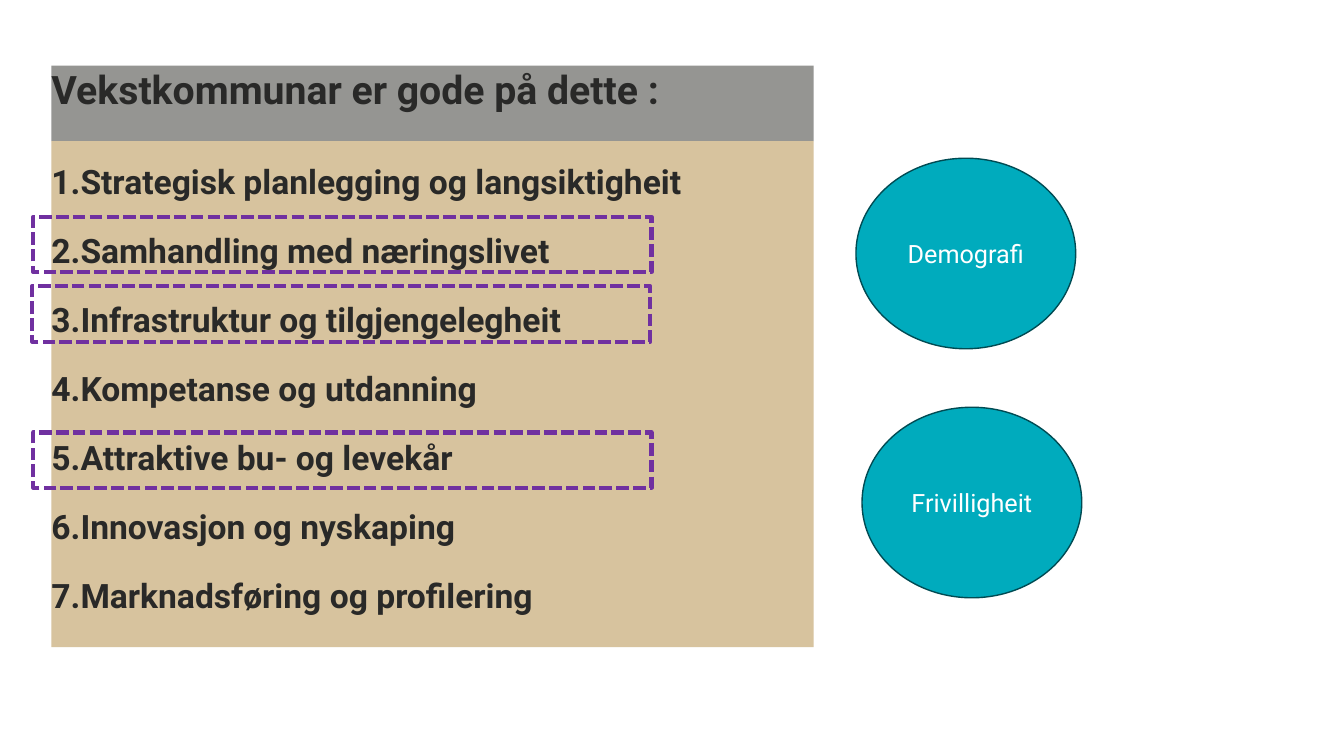
from dataclasses import dataclass

from lxml import etree
from pptx import Presentation
from pptx.dml.color import RGBColor
from pptx.enum.dml import MSO_LINE
from pptx.enum.shapes import MSO_SHAPE
from pptx.enum.text import MSO_ANCHOR, MSO_AUTO_SIZE, PP_ALIGN
from pptx.oxml.ns import qn
from pptx.shapes.autoshape import Shape
from pptx.slide import Slide
from pptx.util import Emu, Inches, Pt

RECTANGLE, OVAL = MSO_SHAPE.RECTANGLE, MSO_SHAPE.OVAL
TOP, MIDDLE = MSO_ANCHOR.TOP, MSO_ANCHOR.MIDDLE
LEFT, CENTER = PP_ALIGN.LEFT, PP_ALIGN.CENTER
DASHED = MSO_LINE.SQUARE_DOT
NO_AUTOFIT = MSO_AUTO_SIZE.NONE
TITLE_ONLY = 5
SLIDE_WIDTH, SLIDE_HEIGHT = Inches(13.33), Inches(7.5)


@dataclass(frozen=True)
class Theme:
    font: str = "Roboto"
    ink: str = "292928"
    white: str = "FFFFFF"
    sand: str = "D7C39E"
    gray: str = "959592"
    purple: str = "7030A0"
    teal: str = "00ABBD"
    dark_teal: str = "004B53"
    title_size: int = 28
    list_size: int = 24
    label_size: int = 18


@dataclass(frozen=True)
class Area:
    """Percent shares of the slide's width and height."""

    left: float
    top: float
    width: float
    height: float

    def bounds(self) -> tuple[Emu, Emu, Emu, Emu]:
        return (
            Emu(round(SLIDE_WIDTH * self.left / 100)),
            Emu(round(SLIDE_HEIGHT * self.top / 100)),
            Emu(round(SLIDE_WIDTH * self.width / 100)),
            Emu(round(SLIDE_HEIGHT * self.height / 100)),
        )


@dataclass(frozen=True)
class Factor:
    label: str
    area: Area


THEME = Theme()
PANEL_LEFT, PANEL_WIDTH = 3.83, 56.71
HEADING_AREA = Area(PANEL_LEFT, 8.67, PANEL_WIDTH, 10)
LIST_AREA = Area(PANEL_LEFT, 18.67, PANEL_WIDTH, 66.93)
STRENGTHS = [
    "Strategisk planlegging og langsiktigheit",
    "Samhandling med næringslivet",
    "Infrastruktur og tilgjengelegheit",
    "Kompetanse og utdanning",
    "Attraktive bu- og levekår",
    "Innovasjon og nyskaping",
    "Marknadsføring og profilering",
]
HIGHLIGHTS = [
    Area(left, top, 45.99, 7.33)
    for left, top in ((2.48, 28.67), (2.4, 37.87), (2.48, 57.2))
]
FACTORS = [
    Factor("Demografi", Area(63.69, 20.93, 16.35, 25.2)),
    Factor("Frivilligheit", Area(64.14, 53.87, 16.35, 25.2)),
]


def place(shape: Shape, area: Area) -> None:
    shape.left, shape.top, shape.width, shape.height = area.bounds()


def paint(shape: Shape, color: str) -> None:
    shape.fill.solid()
    shape.fill.fore_color.rgb = RGBColor.from_string(color)


def write_text(
    shape: Shape,
    lines: list[str],
    *,
    size: int,
    color: str,
    bold: bool = False,
    align: PP_ALIGN = LEFT,
    anchor: MSO_ANCHOR = TOP,
    inset: float = 0,
    numbered: bool = False,
    line_spacing: float = 1.0,
    space_before: float = 0,
) -> None:
    frame = shape.text_frame
    frame.word_wrap = True
    frame.auto_size = NO_AUTOFIT
    frame.vertical_anchor = anchor
    frame.margin_left = frame.margin_right = Inches(inset)
    frame.margin_top = frame.margin_bottom = Inches(inset / 2)
    for index, line in enumerate(lines):
        paragraph = frame.add_paragraph() if index else frame.paragraphs[0]
        paragraph.text = line
        paragraph.alignment = align
        paragraph.line_spacing = line_spacing
        paragraph.space_before = Pt(space_before if index else 0)
        if numbered:
            number_paragraph(paragraph._p.get_or_add_pPr())
        font = paragraph.font
        font.name = THEME.font
        font.size = Pt(size)
        font.bold = bold
        font.color.rgb = RGBColor.from_string(color)


def number_paragraph(properties: etree.ElementBase) -> None:
    indent = Inches(0.2)
    properties.set("marL", str(indent))
    properties.set("indent", str(-indent))
    bullet_font = etree.SubElement(properties, qn("a:buFont"))
    bullet_font.set("typeface", "+mj-lt")
    numbering = etree.SubElement(properties, qn("a:buAutoNum"))
    numbering.set("type", "arabicPeriod")


def add_outlined_shape(
    slide: Slide, kind: MSO_SHAPE, area: Area, *, line: str, weight: float
) -> Shape:
    shape = slide.shapes.add_shape(kind, *area.bounds())
    shape.shadow.inherit = False
    shape.line.color.rgb = RGBColor.from_string(line)
    shape.line.width = Pt(weight)
    return shape


def add_heading(slide: Slide) -> None:
    heading = slide.shapes.title
    place(heading, HEADING_AREA)
    paint(heading, THEME.gray)
    write_text(heading, ["Vekstkommunar er gode på dette :"],
               size=THEME.title_size, color=THEME.ink, bold=True)


def add_strengths(slide: Slide) -> None:
    panel = slide.shapes.add_textbox(*LIST_AREA.bounds())
    paint(panel, THEME.sand)
    write_text(panel, STRENGTHS, size=THEME.list_size, color=THEME.ink, bold=True,
               numbered=True, line_spacing=1.5, space_before=6)


def add_highlight(slide: Slide, area: Area) -> None:
    highlight = add_outlined_shape(slide, RECTANGLE, area, line=THEME.purple, weight=3)
    highlight.fill.background()
    highlight.line.dash_style = DASHED


def add_factor(slide: Slide, factor: Factor) -> None:
    oval = add_outlined_shape(slide, OVAL, factor.area, line=THEME.dark_teal, weight=1)
    paint(oval, THEME.teal)
    write_text(oval, [factor.label], size=THEME.label_size, color=THEME.white,
               align=CENTER, anchor=MIDDLE, inset=0.1)


def main() -> None:
    presentation = Presentation()
    presentation.slide_width, presentation.slide_height = SLIDE_WIDTH, SLIDE_HEIGHT
    slide = presentation.slides.add_slide(presentation.slide_layouts[TITLE_ONLY])
    add_heading(slide)
    add_strengths(slide)
    for area in HIGHLIGHTS:
        add_highlight(slide, area)
    for factor in FACTORS:
        add_factor(slide, factor)
    presentation.save("out.pptx")


if __name__ == "__main__":
    main()
